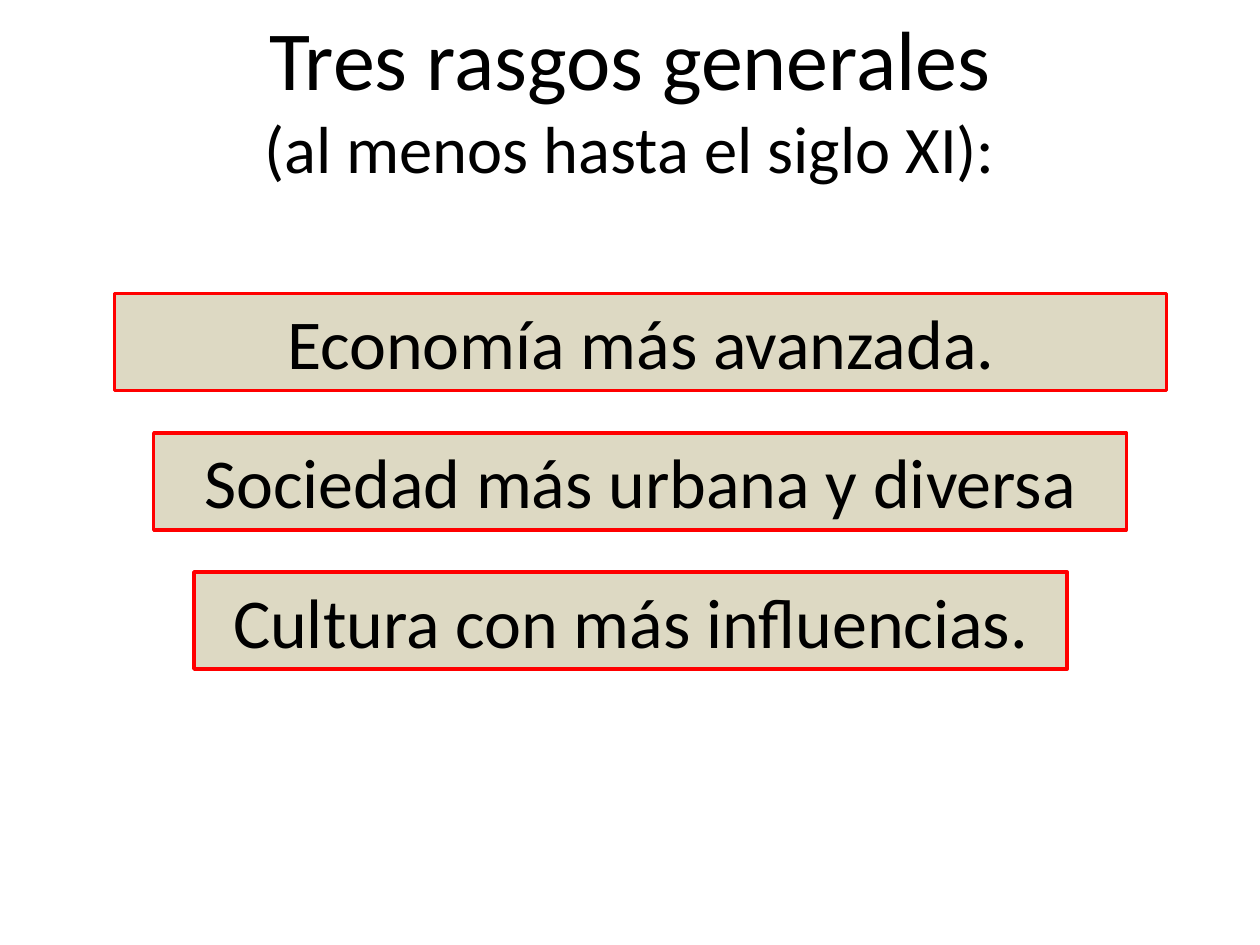
from dataclasses import dataclass

from pptx import Presentation
from pptx.dml.color import RGBColor
from pptx.enum.shapes import MSO_SHAPE as Shape
from pptx.enum.text import MSO_ANCHOR as Anchor, MSO_AUTO_SIZE as AutoSize, PP_ALIGN as Align
from pptx.slide import Slide
from pptx.text.text import TextFrame
from pptx.util import Inches, Pt

BLACK = RGBColor(0x00, 0x00, 0x00)
RED = RGBColor(0xFF, 0x00, 0x00)
SAND = RGBColor(0xDD, 0xD9, 0xC3)

FONT = "Calibri"
FIRST_TOP = 2.33
STEP = 1.105
BOX_HEIGHT = 0.77


@dataclass
class Trait:
    text: str
    left: float
    width: float


TRAITS = [
    Trait("Economía más avanzada.", 0.91, 8.35),
    Trait("Sociedad más urbana y diversa", 1.22, 7.72),
    Trait("Cultura con más influencias.", 1.54, 6.93),
]


def add_line(tf: TextFrame, text: str, *, size: float, first: bool = True) -> None:
    p = tf.paragraphs[0] if first else tf.add_paragraph()
    p.alignment = Align.CENTER
    r = p.add_run()
    r.text = text
    r.font.name = FONT
    r.font.size = Pt(size)
    r.font.color.rgb = BLACK


def add_title(s: Slide) -> None:
    sp = s.shapes.title
    sp.left, sp.top, sp.width, sp.height = Inches(0), Inches(0), Inches(10), Inches(1.55)
    tf = sp.text_frame
    tf.word_wrap = True
    tf.auto_size = AutoSize.NONE
    tf.vertical_anchor = Anchor.TOP
    add_line(tf, "Tres rasgos generales", size=48)
    add_line(tf, "(al menos hasta el siglo XI):", size=38, first=False)
    for p in tf.paragraphs:
        p.space_before = Pt(0)


def add_trait(s: Slide, trait: Trait, top: float) -> None:
    sp = s.shapes.add_shape(
        Shape.RECTANGLE, Inches(trait.left), Inches(top), Inches(trait.width), Inches(BOX_HEIGHT)
    )
    sp.shadow.inherit = False
    sp.fill.solid()
    sp.fill.fore_color.rgb = SAND
    sp.line.color.rgb = RED
    sp.line.width = Pt(2)
    tf = sp.text_frame
    tf.word_wrap = True
    tf.vertical_anchor = Anchor.TOP
    add_line(tf, trait.text, size=40)


def main() -> None:
    prs = Presentation()
    prs.slide_width, prs.slide_height = Inches(10), Inches(7.5)
    s = prs.slides.add_slide(prs.slide_layouts[5])
    add_title(s)
    for i, trait in enumerate(TRAITS):
        add_trait(s, trait, FIRST_TOP + i * STEP)
    prs.save("out.pptx")


if __name__ == "__main__":
    main()
